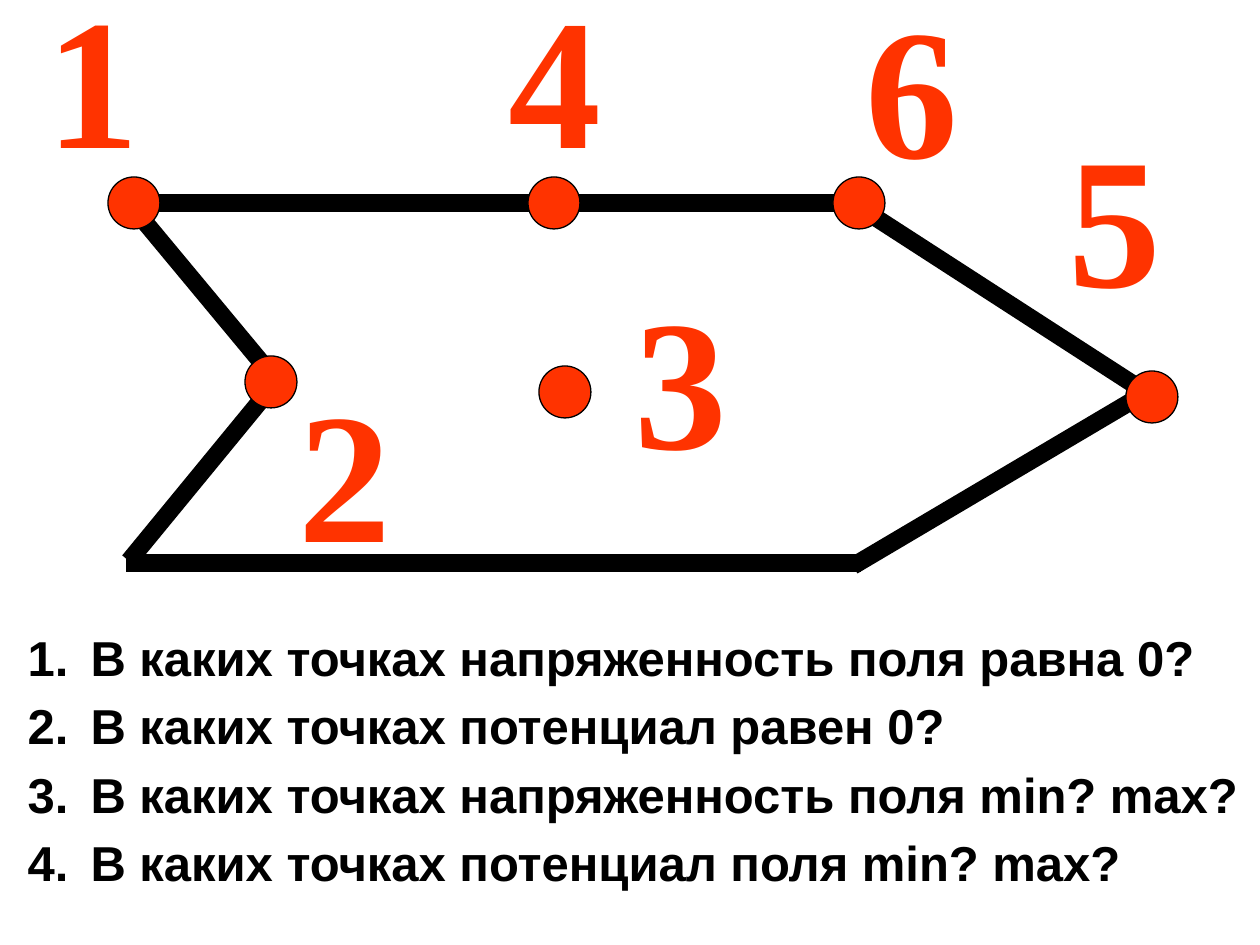
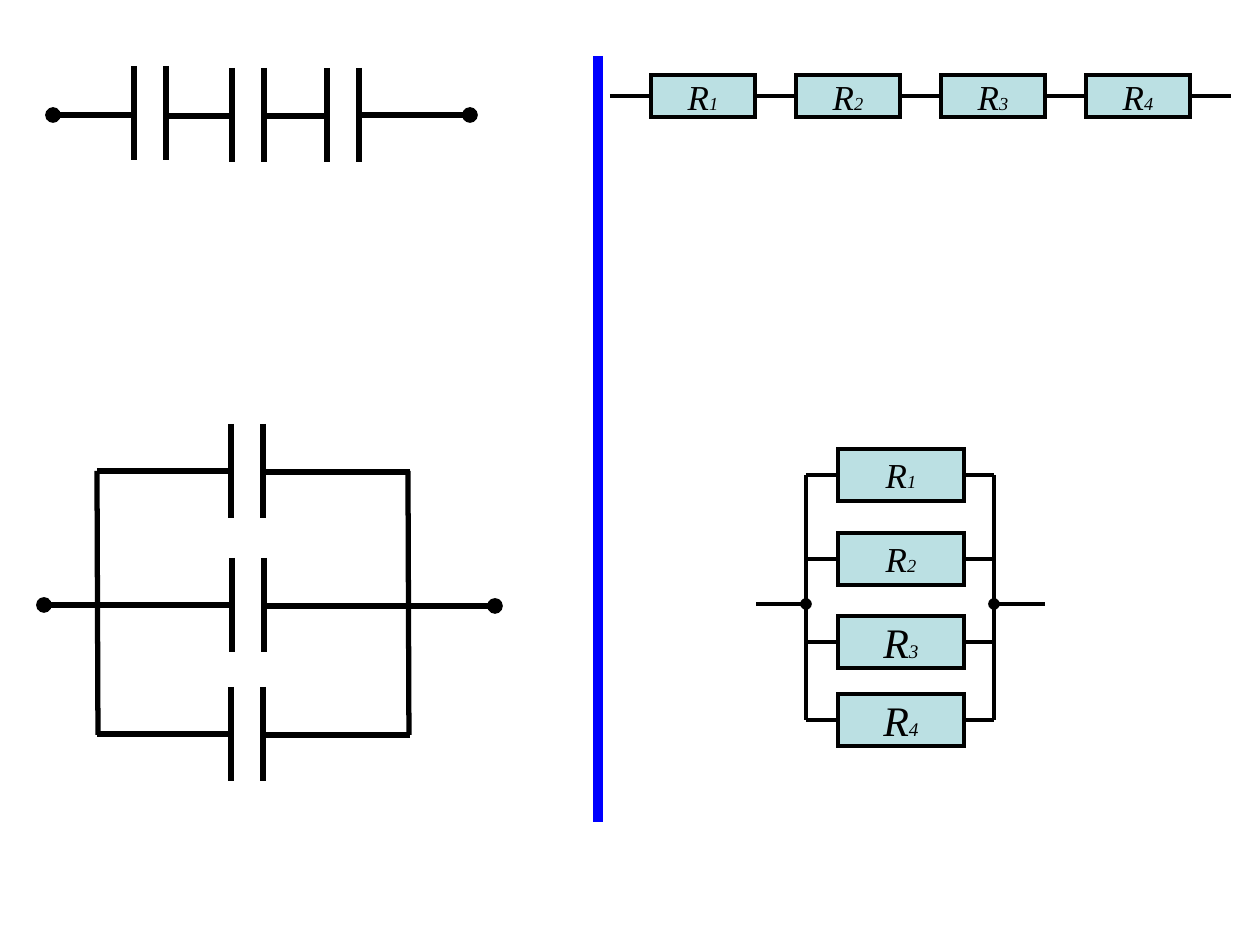
from lxml.etree import SubElement
from pptx import Presentation
from pptx.dml.color import RGBColor
from pptx.enum.shapes import MSO_CONNECTOR, MSO_SHAPE
from pptx.enum.text import MSO_ANCHOR, MSO_AUTO_SIZE, PP_ALIGN
from pptx.oxml.ns import qn
from pptx.util import Inches, Pt

PX = 914400 // 126
HUES = {"red": "FF3300", "black": "000000", "blue": "0000FF", "pale": "BBE0E3"}
PENS = {
    "frame": ("black", 10),
    "split": ("blue", 6),
    "plate": ("black", 3),
    "thin": ("black", 2.25),
}
FONTS = {
    "digit": {"name": "Times New Roman", "size": Pt(106), "bold": True},
    "task": {"name": "Arial", "size": Pt(28), "bold": True},
    "part": {"name": "Times New Roman", "italic": True},
}


def wire(slide, x1, y1, x2, y2, pen, dot=False):
    line = slide.shapes.add_connector(
        MSO_CONNECTOR.STRAIGHT, x1 * PX, y1 * PX, x2 * PX, y2 * PX)
    hue, width = PENS[pen]
    line.line.color.rgb = RGBColor.from_string(HUES[hue])
    line.line.width = Pt(width)
    if dot:
        SubElement(line.line._get_or_add_ln(), qn("a:headEnd"), type="oval")
    SubElement(line.element.spPr, qn("a:effectLst"))
    return line


def write(para, text, look, hue="black", **more):
    run = para.add_run()
    run.text = text
    for key, value in {**FONTS[look], **more}.items():
        setattr(run.font, key, value)
    run.font.color.rgb = RGBColor.from_string(HUES[hue])


deck = Presentation()
deck.slide_width, deck.slide_height = Inches(10), Inches(7.5)

field = deck.slides.add_slide(deck.slide_layouts[1])
title = field.shapes.title.element
title.getparent().remove(title)

for ends in [
    (129, 203, 864, 203),
    (126, 563, 861, 563),
    (853, 203, 1147, 393),
    (129, 203, 286, 392),
    (129, 561, 276, 382),
    (853, 566, 1137, 398),
]:
    wire(field, *ends, "frame")

for x, y in [(271, 382), (134, 203), (859, 203), (1152, 397), (554, 203), (565, 392)]:
    spot = field.shapes.add_shape(
        MSO_SHAPE.OVAL, (x - 26) * PX, (y - 26) * PX, 52 * PX, 52 * PX)
    spot.shadow.inherit = False
    spot.fill.solid()
    spot.fill.fore_color.rgb = RGBColor.from_string(HUES["red"])
    spot.line.color.rgb = RGBColor.from_string(HUES["black"])
    spot.line.width = Pt(0.75)

for digit, x, y in [
    ("1", 34, -37), ("4", 496, -37), ("2", 286, 357),
    ("3", 622, 264), ("5", 1056, 102), ("6", 853, -27),
]:
    box = field.shapes.add_textbox(x * PX, y * PX, 126 * PX, 215 * PX)
    box.text_frame.word_wrap = True
    box.text_frame.margin_top = 0
    write(box.text_frame.paragraphs[0], digit, "digit", "red")

body = field.placeholders[1]
for key, value in {"left": 15, "top": 621, "width": 1245, "height": 300}.items():
    setattr(body, key, value * PX)
frame = body.text_frame
frame.auto_size = MSO_AUTO_SIZE.NONE
frame.vertical_anchor = MSO_ANCHOR.TOP
for i, task in enumerate([
    "В каких точках напряженность поля равна 0?",
    "В каких точках потенциал равен 0?",
    "В каких точках напряженность поля min? max?",
    "В каких точках потенциал поля min? max?",
]):
    para = frame.add_paragraph() if i else frame.paragraphs[0]
    para.space_before = Pt(5.5 if i else 0)
    props = para._p.get_or_add_pPr()
    props.set("marL", str(63 * PX))
    props.set("indent", str(-63 * PX))
    SubElement(props, qn("a:buFont"), typeface="+mj-lt")
    SubElement(props, qn("a:buAutoNum"), type="arabicPeriod")
    write(para, task, "task")

chains = deck.slides.add_slide(deck.slide_layouts[6])
wire(chains, 598, 56, 598, 822, "split")

for x, y in [(134, 66), (232, 68), (327, 68), (231, 424), (232, 558), (231, 687)]:
    for plate in (x, x + 32):
        wire(chains, plate, y, plate, y + 94, "plate")

for y in (471, 605, 734):
    wire(chains, 97, y, 231, y, "plate")
    wire(chains, 263, y + 1, 410, y + 1, "plate")

for ends in [
    (166, 116, 232, 116), (264, 116, 327, 116),
    (98, 735, 97, 471), (409, 735, 408, 471),
]:
    wire(chains, *ends, "plate")

for ends in [
    (53, 115, 134, 115), (470, 115, 358, 115),
    (44, 605, 105, 605), (495, 606, 401, 606),
]:
    wire(chains, *ends, "plate", dot=True)

row = [(651 + 145 * i, 75, 104, 42, 20, 10.5) for i in range(4)]
stack = [(838, y, 126, 52, size, sub) for y, size, sub in
         [(449, 20, 10.5), (533, 20, 10.5), (616, 24, 11), (694, 24, 11)]]
parts = []
for i, (x, y, wide, high, size, sub) in enumerate(row + stack):
    part = chains.shapes.add_shape(
        MSO_SHAPE.RECTANGLE, x * PX, y * PX, wide * PX, high * PX)
    part.shadow.inherit = False
    part.fill.solid()
    part.fill.fore_color.rgb = RGBColor.from_string(HUES["pale"])
    part.line.color.rgb = RGBColor.from_string(HUES["black"])
    part.line.width = Pt(2.25)
    SubElement(part.line._get_or_add_ln(), qn("a:miter"), lim="800000")
    frame = part.text_frame
    for key, value in {
        "margin_left": 0, "margin_right": 0, "margin_top": 0, "margin_bottom": 0,
        "word_wrap": False, "vertical_anchor": MSO_ANCHOR.MIDDLE,
    }.items():
        setattr(frame, key, value)
    para = frame.paragraphs[0]
    para.alignment = PP_ALIGN.CENTER
    write(para, "R", "part", size=Pt(size))
    write(para, str(i % 4 + 1), "part", size=Pt(sub))
    parts.append(part)

for i in range(5):
    x = 610 + 145 * i
    link = wire(chains, x, 96, x + 41, 96, "thin")
    if i > 0:
        link.begin_connect(parts[i - 1], 3)
    if i < 4:
        link.end_connect(parts[i], 1)

for part, (x, y, wide, high, size, sub) in zip(parts[4:], stack):
    mid = y + high // 2
    for bus, edge, side in [(806, x, 1), (994, x + wide, 3)]:
        wire(chains, bus, mid, edge, mid, "thin").end_connect(part, side)

for bus, end in [(806, 756), (994, 1045)]:
    wire(chains, bus, 475, bus, 720, "thin")
    wire(chains, bus, 604, end, 604, "thin", dot=True)

deck.save("out.pptx")
